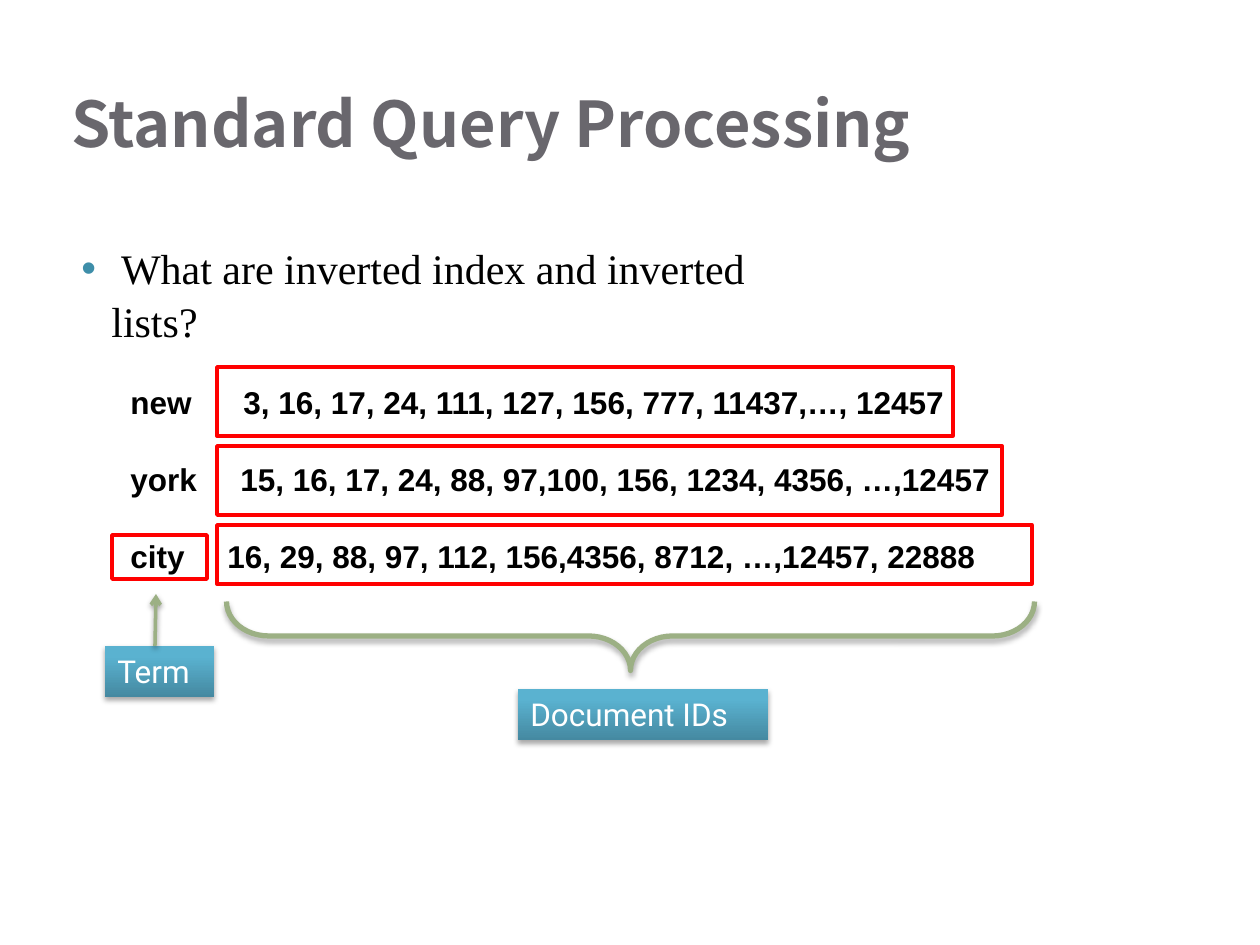
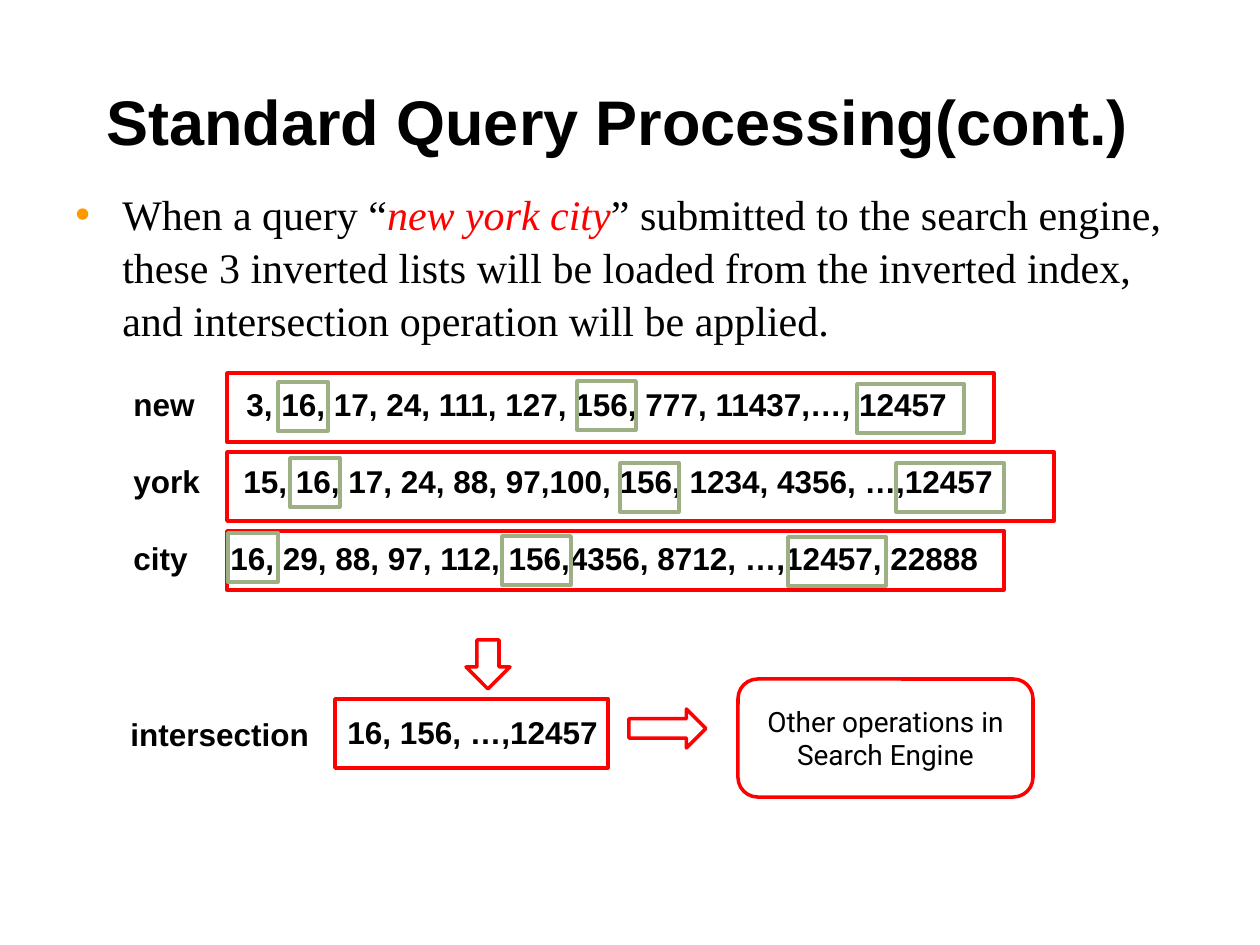
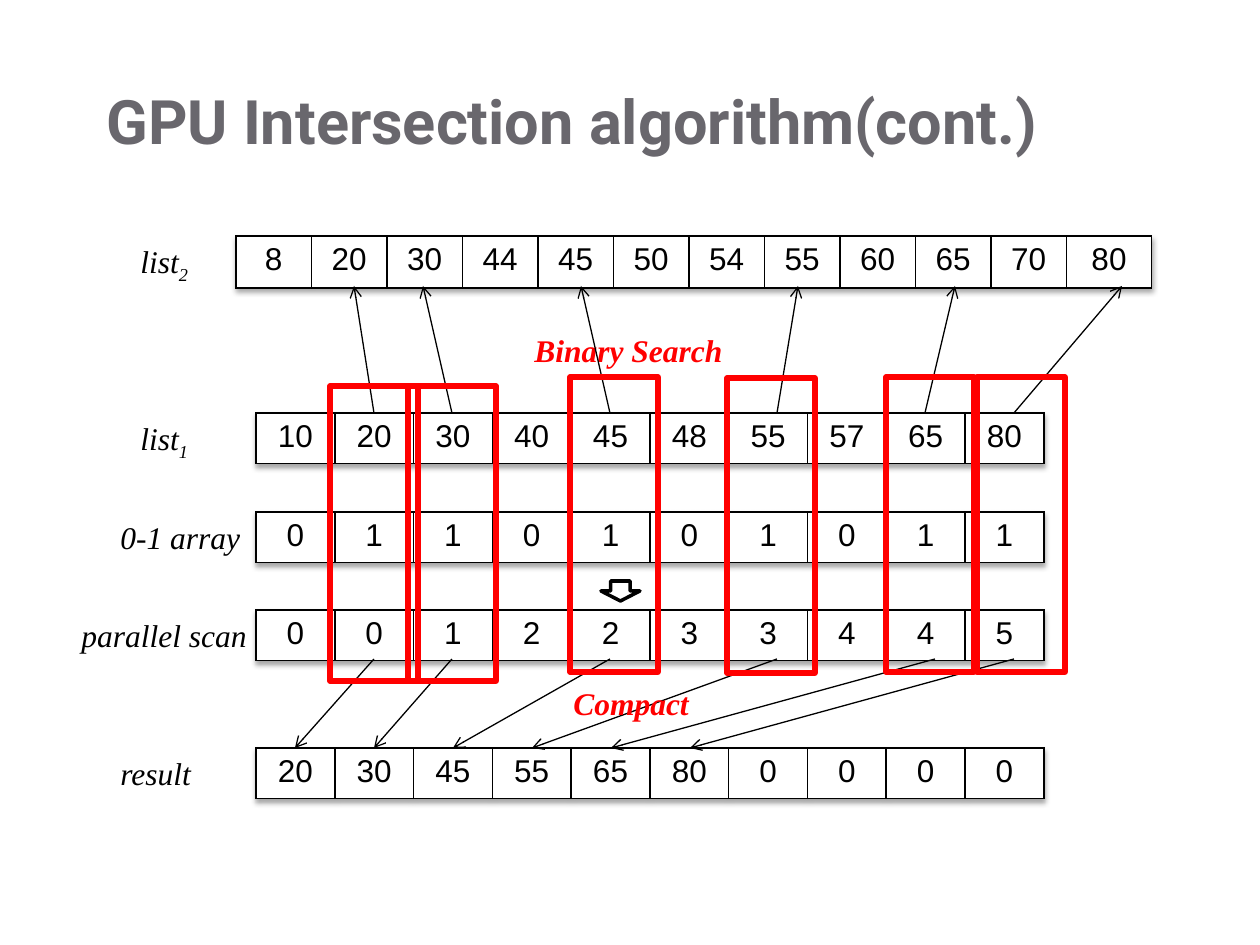
from dataclasses import dataclass

from lxml.etree import SubElement
from pptx import Presentation
from pptx.dml.color import RGBColor
from pptx.enum.shapes import MSO_CONNECTOR as Connector, MSO_SHAPE as Shape
from pptx.enum.text import MSO_ANCHOR as Anchor, PP_ALIGN as Align
from pptx.oxml.ns import qn
from pptx.util import Inches, Pt


@dataclass(frozen=True)
class Theme:
    black: str = "000000"
    white: str = "FFFFFF"
    red: str = "FF0000"
    green: str = "9CB084"
    heading: str = "69676D"
    heading_shadow: str = "C9C2D1"
    blue_dark: str = "4589A1"
    blue_light: str = "5AB2D0"
    teal_bullet: str = "3E8EA9"
    orange_bullet: str = "FF9900"
    sans: str = "Arial"
    serif: str = "Times New Roman"
    ui: str = "Roboto"
    cjk: str = "Noto Sans CJK SC"
    title_size: int = 36
    body_size: int = 24
    label_size: int = 18
    note_size: int = 16


PX_PER_INCH = 126
POSTINGS = (
    ("new", "3, 16, 17, 24, 111, 127, 156, 777, 11437,…, 12457", 113),
    ("york", "15, 16, 17, 24, 88, 97,100, 156, 1234, 4356, …,12457", 110),
    ("city", "16, 29, 88, 97, 112, 156,4356, 8712, …,12457, 22888", 97),
)


def px(length):
    return round(length * Inches(1) / PX_PER_INCH)


def color(value):
    return RGBColor.from_string(value)


def add_shadow(effects, tint, alpha, blur=3.1, distance=1.8, angle=90):
    shadow = SubElement(effects, qn("a:outerShdw"), blurRad=str(Pt(blur)),
                        dist=str(Pt(distance)), dir=str(angle * 60000),
                        algn="ctr", rotWithShape="0")
    shade = SubElement(shadow, qn("a:srgbClr"), val=tint)
    SubElement(shade, qn("a:alpha"), val=str(alpha * 1000))


class Deck:
    def __init__(self, theme):
        self.theme = theme
        self.prs = Presentation()
        self.prs.slide_width, self.prs.slide_height = px(1260), px(945)
        self.slide = None

    def new_slide(self):
        self.slide = self.prs.slides.add_slide(self.prs.slide_layouts[6])

    def style(self, run, size, font, tint, bold=False, italic=False):
        run.font.size, run.font.name = Pt(size), font
        run.font.bold, run.font.italic = bold, italic
        run.font.color.rgb = color(tint)

    def box(self, left, top, width, height, wrap=False):
        frame = self.slide.shapes.add_textbox(
            px(left), px(top), px(width), px(height)).text_frame
        frame.word_wrap = wrap
        return frame

    def title(self, text, left, top, width, height, font, tint, size=None):
        frame = self.box(left, top, width, height, wrap=True)
        frame.text = text
        frame.vertical_anchor = Anchor.MIDDLE
        heading = frame.paragraphs[0]
        heading.line_spacing = 0.85
        run = heading.runs[0]
        self.style(run, size or self.theme.title_size, font, tint, bold=True)
        fill = run.font._element.find(qn("a:solidFill"))
        effects = SubElement(run.font._element, qn("a:effectLst"))
        fill.addnext(effects)
        add_shadow(effects, self.theme.heading_shadow, 100, 0, 1.8, 45)

    def label(self, text, left, top, width, font=None, tint=None,
              bold=False, italic=False, subscript=None):
        frame = self.box(left, top, width, 51)
        frame.text = text
        line = frame.paragraphs[0]
        if subscript:
            line.add_run().text = subscript
            line.runs[1].font._element.set("baseline", "-25000")
        for run in line.runs:
            self.style(run, self.theme.label_size, font or self.theme.serif,
                       tint or self.theme.black, bold, italic)

    def bullet(self, parts, left, top, width, height, indent, bullet_tint):
        """parts holds (text, emphasised) pairs."""
        line = self.box(left, top, width, height, wrap=True).paragraphs[0]
        line.line_spacing = 1.05
        props = line._p.get_or_add_pPr()
        props.set("marL", str(px(indent)))
        props.set("indent", str(-px(indent)))
        tint = SubElement(props, qn("a:buClr"))
        SubElement(tint, qn("a:srgbClr"), val=bullet_tint)
        SubElement(props, qn("a:buFont"), typeface=self.theme.sans)
        SubElement(props, qn("a:buChar"), char="•")
        for text, emphasised in parts:
            run = line.add_run()
            run.text = text
            self.style(run, self.theme.body_size, self.theme.serif,
                       self.theme.red if emphasised else self.theme.black,
                       italic=emphasised)

    def shape(self, kind, left, top, width, height, line=None, weight=2,
              fill=None, shadow=False):
        shape = self.slide.shapes.add_shape(
            kind, px(left), px(top), px(width), px(height))
        shape.shadow.inherit = False
        if shadow:
            add_shadow(shape._element.spPr.find(qn("a:effectLst")),
                       self.theme.black, 35)
        if fill:
            shape.fill.solid()
            shape.fill.fore_color.rgb = color(fill)
        else:
            shape.fill.background()
        if line:
            shape.line.color.rgb = color(line)
            shape.line.width = Pt(weight)
        else:
            shape.line.fill.background()
        return shape

    def frame(self, left, top, width, height, tint=None, weight=2):
        self.shape(Shape.RECTANGLE, left, top, width, height,
                   tint or self.theme.red, weight)

    def shape_text(self, shape, text, size, tint, align, anchor):
        frame = shape.text_frame
        frame.text = text
        frame.word_wrap = True
        frame.vertical_anchor = anchor
        frame.paragraphs[0].alignment = align
        self.style(frame.paragraphs[0].runs[0], size, self.theme.ui, tint)

    def tag(self, text, left, top, width):
        tag = self.shape(Shape.RECTANGLE, left, top, width, 51, shadow=True)
        tag.fill.gradient()
        tag.fill.gradient_angle = 90
        dark, light = tag.fill.gradient_stops
        dark.color.rgb = color(self.theme.blue_dark)
        light.color.rgb = color(self.theme.blue_light)
        light.position = 0.8
        self.shape_text(tag, text, self.theme.label_size, self.theme.white,
                        Align.LEFT, Anchor.TOP)

    def arrow(self, x1, y1, x2, y2, tint=None, weight=0.75, shadow=False):
        arrow = self.slide.shapes.add_connector(
            Connector.STRAIGHT, px(x1), px(y1), px(x2), px(y2))
        arrow.line.color.rgb = color(tint or self.theme.black)
        arrow.line.width = Pt(weight)
        SubElement(arrow.line._get_or_add_ln(), qn("a:tailEnd"), type="arrow")
        effects = SubElement(arrow._element.spPr, qn("a:effectLst"))
        if shadow:
            add_shadow(effects, self.theme.black, 38, distance=1.6)

    def array(self, values, left, top, width, height=50, last=None):
        """One-row table with equal columns; last sets the final width."""
        count = len(values)
        table = self.slide.shapes.add_table(
            1, count, px(left), px(top), px(width), px(height)).table
        table.first_row = table.horz_banding = False
        effects = SubElement(table._tbl.tblPr, qn("a:effectLst"))
        table._tbl.tblPr.insert(0, effects)
        add_shadow(effects, self.theme.black, 35)
        last = last or width / count
        for index, value in enumerate(values):
            is_last = index == count - 1
            table.columns[index].width = px(
                last if is_last else (width - last) / (count - 1))
            cell = table.cell(0, index)
            cell.text = str(value)
            cell.text_frame.paragraphs[0].alignment = Align.CENTER
            self.style(cell.text_frame.paragraphs[0].runs[0],
                       self.theme.label_size, self.theme.sans, self.theme.black)
            self.cell_borders(cell)
            cell.fill.solid()
            cell.fill.fore_color.rgb = color(self.theme.white)

    def cell_borders(self, cell):
        props = cell._tc.get_or_add_tcPr()
        for side in ("lnL", "lnR", "lnT", "lnB"):
            border = SubElement(props, qn(f"a:{side}"), w=str(Pt(1)))
            fill = SubElement(border, qn("a:solidFill"))
            SubElement(fill, qn("a:srgbClr"), val=self.theme.black)

    def inverted_lists(self, left, top, frame_left, frame_top, frame_widths):
        text = self.box(left, top, 1071, 204, wrap=True)
        text.text = "\n".join(f"{term}\t{ids}" for term, ids, _ in POSTINGS)
        for index, (line, posting) in enumerate(zip(text.paragraphs, POSTINGS)):
            if index:
                line.space_before = Pt(22.4)
            stops = SubElement(line._p.get_or_add_pPr(), qn("a:tabLst"))
            SubElement(stops, qn("a:tab"), pos=str(px(posting[2])), algn="l")
            for run in line.runs:
                self.style(run, self.theme.label_size, self.theme.sans,
                           self.theme.black, bold=True)
        for index, (width, height) in enumerate(zip(frame_widths, (69, 69, 59))):
            self.frame(frame_left, frame_top + 79 * index, width, height)


def index_slide(deck, theme):
    deck.new_slide()
    deck.title("Standard Query Processing", 59, 49, 1134, 158,
               theme.cjk, theme.heading)
    deck.inverted_lists(118, 377, 217, 367, (736, 785, 815))
    deck.bullet([(" What are inverted index and inverted lists?", False)],
                69, 234, 779, 63, 30, theme.teal_bullet)

    # Term callout
    deck.frame(112, 535, 95, 44)
    deck.tag("Term", 105, 646, 109)
    deck.arrow(155, 646, 156, 594, theme.green, 2, shadow=True)

    # Document IDs callout
    brace = deck.shape(Shape.RIGHT_BRACE, 596, 232, 69, 808,
                       theme.green, 3, shadow=True)
    brace.rotation = 90
    brace.adjustments[0] = 0.61
    deck.tag("Document IDs", 518, 689, 250)


def query_slide(deck, theme):
    deck.new_slide()
    deck.title("Standard Query Processing(cont.)", 94, 63, 1071, 126,
               theme.sans, theme.black)
    deck.bullet([
        ("When a query “", False),
        ("new york city", True),
        ("” submitted to the search engine, these 3 inverted lists will be "
         "loaded from the inverted index, and intersection operation will "
         "be applied.", False),
    ], 63, 180, 1134, 624, 47, theme.orange_bullet)
    deck.inverted_lists(121, 379, 227, 373, (767, 827, 777))

    # IDs found in all three lists
    for left, top, width in (
            (278, 382, 50), (228, 533, 50), (290, 458, 50),
            (577, 381, 59), (620, 463, 59), (502, 536, 69),
            (857, 384, 107), (896, 463, 108), (788, 537, 98)):
        deck.frame(left, top, width, 49, theme.green)

    # Intersection and the following step
    deck.label("16, 156, …,12457", 335, 707, 276, theme.sans, bold=True)
    deck.frame(335, 699, 273, 69)
    deck.shape(Shape.DOWN_ARROW, 466, 640, 44, 49, theme.red, fill=theme.white)
    deck.shape(Shape.RIGHT_ARROW, 629, 709, 77, 39, theme.red, fill=theme.white)
    next_step = deck.shape(Shape.ROUNDED_RECTANGLE, 738, 679, 295, 118,
                           theme.red, fill=theme.white)
    deck.shape_text(next_step, "Other operations in Search Engine",
                    theme.note_size, theme.black, Align.CENTER, Anchor.MIDDLE)
    deck.label("intersection", 118, 709, 205, theme.sans, bold=True)


def gpu_slide(deck, theme):
    deck.new_slide()
    deck.title("GPU Intersection algorithm(cont.)", 94, 63, 1071, 126,
               theme.ui, theme.heading, size=35)

    # Arrays and their labels
    deck.array((8, 20, 30, 44, 45, 50, 54, 55, 60, 65, 70, 80),
               236, 236, 916, 52, last=85)
    for top, values in (
            (413, (10, 20, 30, 40, 45, 48, 55, 57, 65, 80)),
            (512, (0, 1, 1, 0, 1, 0, 1, 0, 1, 1)),
            (610, (0, 0, 1, 2, 2, 3, 3, 4, 4, 5)),
            (748, (20, 30, 45, 55, 65, 80, 0, 0, 0, 0))):
        deck.array(values, 256, top, 788)
    for text, subscript, left, top, width in (
            ("list", "2", 128, 236, 74), ("list", "1", 128, 413, 74),
            ("0-1 array", None, 108, 512, 146),
            ("parallel scan", None, 69, 610, 197),
            ("result", None, 108, 748, 97)):
        deck.label(text, left, top, width, italic=True, subscript=subscript)

    # Binary search
    deck.label("Binary Search", 522, 325, 256, tint=theme.red,
               bold=True, italic=True)
    for start, end in ((374, 354), (452, 423), (610, 581),
                       (777, 798), (925, 955), (1014, 1122)):
        deck.arrow(start, 413, end, 286)
    deck.shape(Shape.DOWN_ARROW, 601, 581, 39, 20, theme.black,
               fill=theme.white)

    # Compaction
    for index, start in enumerate((374, 452, 610, 777, 935, 1014)):
        deck.arrow(start, 659, 295 + 79 * index, 748)
    deck.label("Compact", 561, 678, 256, tint=theme.red,
               bold=True, italic=True)

    # Matching columns
    for left, top in ((330, 386), (570, 377), (408, 386),
                      (727, 378), (886, 377), (977, 377)):
        deck.frame(left, top, 88, 295, weight=3)


def main():
    theme = Theme()
    deck = Deck(theme)
    for build in (index_slide, query_slide, gpu_slide):
        build(deck, theme)
    deck.prs.save("out.pptx")


if __name__ == "__main__":
    main()
